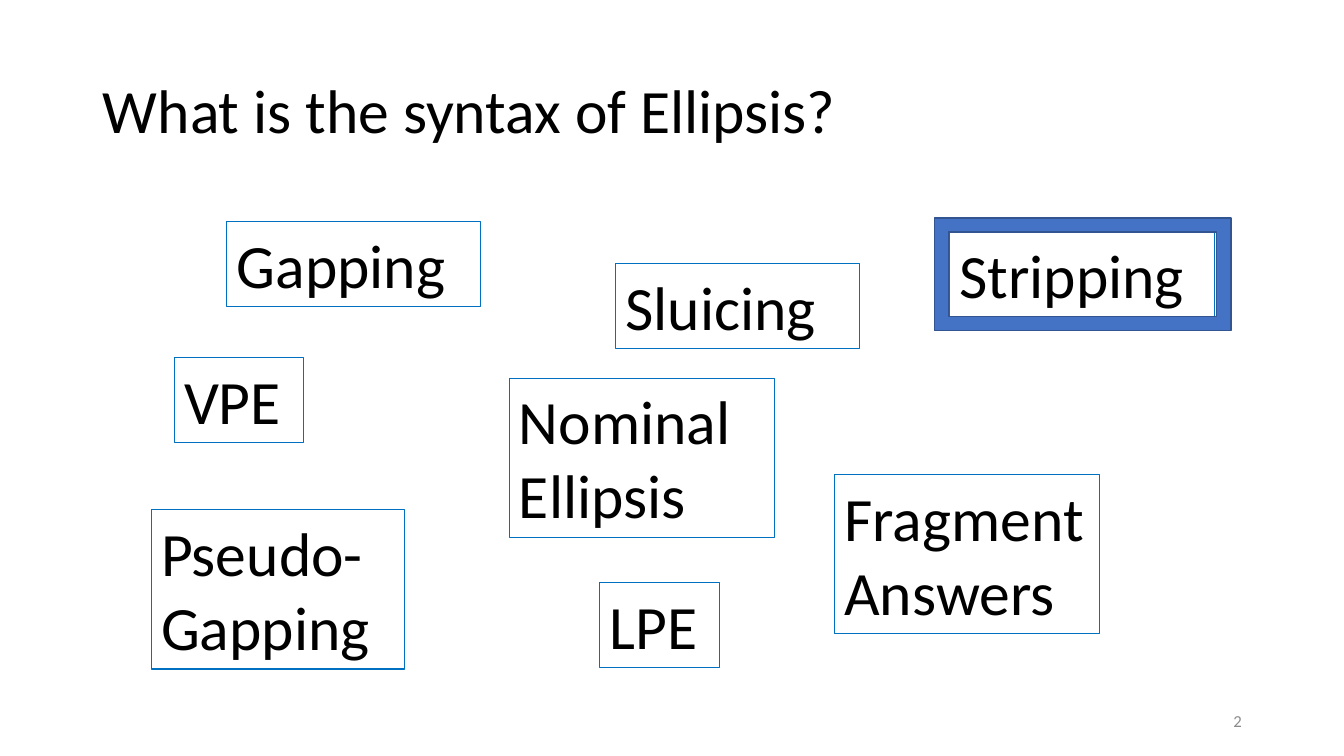
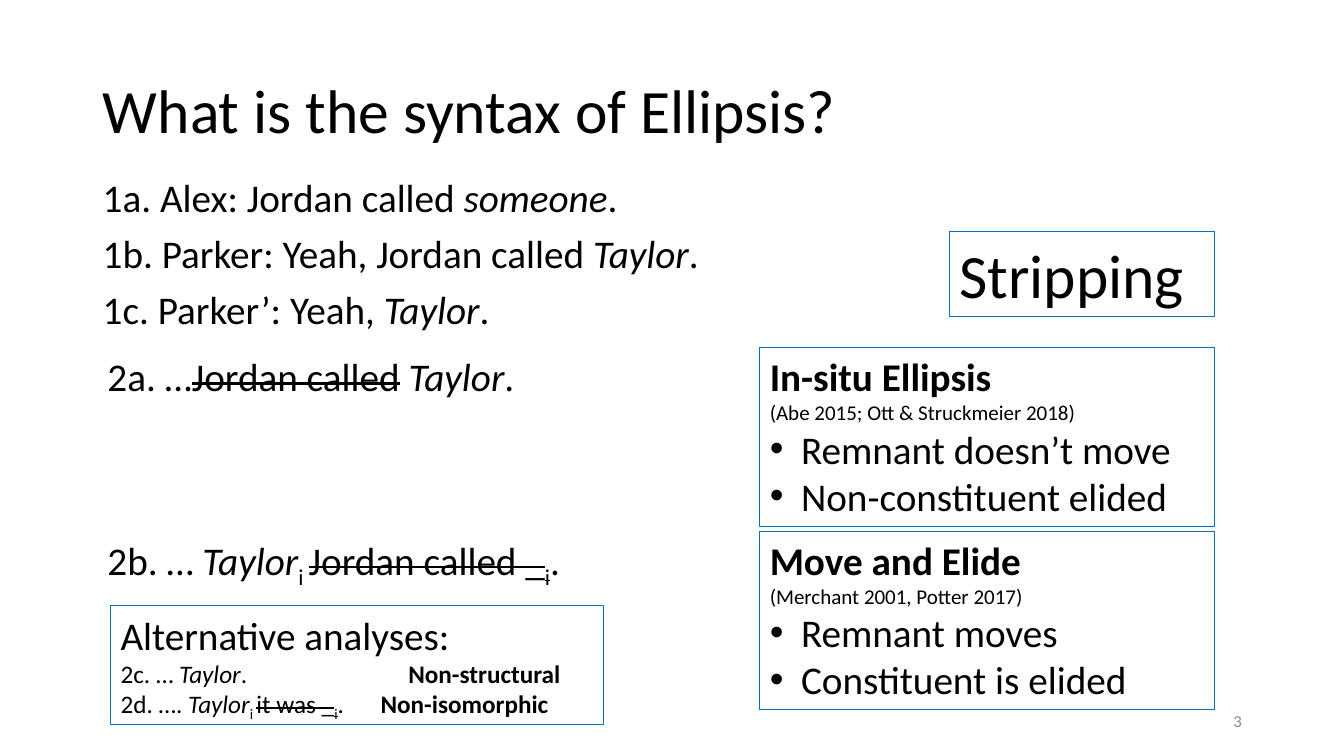
"""Build two slides on the syntax of ellipsis."""
import dataclasses
import typing

import lxml.etree
import pptx
import pptx.dml.color
import pptx.enum.shapes
import pptx.enum.text
import pptx.oxml.ns
import pptx.util

Cm = pptx.util.Cm
BLACK = pptx.dml.color.RGBColor(0x00, 0x00, 0x00)
GRAY = pptx.dml.color.RGBColor(0x8C, 0x8C, 0x8C)
OUTLINE = pptx.dml.color.RGBColor(0x00, 0x70, 0xC0)
FRAME_FILL = pptx.dml.color.RGBColor(0x44, 0x72, 0xC4)
FRAME_LINE = pptx.dml.color.RGBColor(0x32, 0x54, 0x91)
FONT = "Calibri"
TITLE = "What is the syntax of Ellipsis?"
TITLE_SIZE, TEXT_SIZE, SMALL_SIZE, SOURCE_SIZE, NUMBER_SIZE = 44, 28, 18, 15, 12
BULLET_INDENT = 0.79
ONE_LINE, TWO_LINES = 2.13, 4.01
CARD_LEFT, CARD_WIDTH = 19.15, 11.46
EXAMPLE_LEFT = 2.46
IN_SITU_TOP, MOVE_TOP = 8.76, 13.39


@dataclasses.dataclass(frozen=True)
class Span:
    """A piece of text with one format."""
    text: str
    bold: bool = False
    italic: bool = False
    strike: bool = False
    subscript: bool = False


@dataclasses.dataclass(frozen=True)
class Line:
    """A paragraph made of spans."""
    spans: tuple[Span, ...]
    size: float = TEXT_SIZE
    bullet: bool = False
    tab: float = 0
    space_before: float = 0
    line_spacing: float = 1.0


@dataclasses.dataclass(frozen=True)
class Box:
    """A text box measured in centimetres."""
    left: float
    top: float
    width: float
    height: float
    lines: tuple[Line, ...]
    outlined: bool = True


def label(left: float, top: float, width: float, height: float, text: str) -> Box:
    """Return an outlined box naming one kind of ellipsis."""
    return Box(left, top, width, height, (Line((Span(text),), TITLE_SIZE),))


def analysis(top: float, heading: str, source: str, *points: str) -> Box:
    """Return a box with a heading, its source and bullet points."""
    lines = (
        Line((Span(heading, bold=True),)),
        Line((Span(source),), SOURCE_SIZE),
        *(Line((Span(point),), bullet=True) for point in points),
    )
    return Box(CARD_LEFT, top, CARD_WIDTH, 4.5, lines)


def dialogue(start: str, remnant: str) -> Line:
    """Return one spaced example line ending in an italic word."""
    spans = (Span(start), Span(remnant, italic=True), Span("."))
    return Line(spans, space_before=10, line_spacing=0.9)


def moved(start: str, elided: str) -> tuple[Span, ...]:
    """Return a fronted remnant followed by struck-out material and a trace."""
    return (
        Span(start),
        Span("Taylor", italic=True),
        Span("i ", subscript=True),
        Span(f"{elided} _", strike=True),
        Span("i", strike=True, subscript=True),
        Span("."),
    )


STRIPPING = label(23.93, 5.84, 6.68, ONE_LINE, "Stripping")
KINDS = (
    STRIPPING,
    label(5.72, 5.59, 6.38, ONE_LINE, "Gapping"),
    label(15.11, 14.68, 3.02, ONE_LINE, "LPE"),
    label(21.03, 11.96, 6.68, TWO_LINES, "Fragment Answers"),
    label(15.51, 6.65, 6.15, ONE_LINE, "Sluicing"),
    label(4.39, 9.02, 3.25, ONE_LINE, "VPE"),
    label(3.81, 12.85, 6.38, TWO_LINES, "Pseudo-Gapping"),
    label(12.83, 9.53, 6.68, TWO_LINES, "Nominal Ellipsis"),
)
ANALYSES = (
    Box(2.34, 4.37, 29.21, 4.39, (
        dialogue("1a. Alex: Jordan called ", "someone"),
        dialogue("1b. Parker: Yeah, Jordan called ", "Taylor"),
        dialogue("1c. Parker’: Yeah, ", "Taylor"),
    ), outlined=False),
    Box(2.79, 15.27, 12.42, 3, (
        Line((Span("Alternative analyses:"),)),
        Line((Span("2c. …"), Span(" Taylor", italic=True), Span(".\t"),
              Span("Non-structural", bold=True)), SMALL_SIZE, tab=7.25),
        Line((*moved("2d. …. ", "it was"), Span("\t"),
              Span("Non-isomorphic", bold=True)), SMALL_SIZE, tab=6.55),
    )),
    analysis(MOVE_TOP, "Move and Elide", "(Merchant 2001, Potter 2017)",
             "Remnant moves", "Constituent is elided"),
    analysis(IN_SITU_TOP, "In-situ Ellipsis", "(Abe 2015; Ott & Struckmeier 2018)",
             "Remnant doesn’t move", "Non-constituent elided"),
    STRIPPING,
    Box(EXAMPLE_LEFT, IN_SITU_TOP, 12.93, 1.45, (
        Line((Span("2a. …"), Span("Jordan called", strike=True), Span(" "),
              Span("Taylor", italic=True), Span("."))),
    ), outlined=False),
    Box(EXAMPLE_LEFT, MOVE_TOP, 14.91, 1.45,
        (Line(moved("2b. … ", "Jordan called")),), outlined=False),
)


def add_text(para: typing.Any, text: str, *, size: float,
             color: pptx.dml.color.RGBColor = BLACK, bold: bool = False,
             italic: bool = False, strike: bool = False,
             subscript: bool = False) -> None:
    """Append formatted text to a paragraph."""
    span = para.add_run()
    span.text = text
    span.font.name = FONT
    span.font.size = pptx.util.Pt(size)
    span.font.color.rgb = color
    span.font.bold = bold
    span.font.italic = italic
    properties = span._r.get_or_add_rPr()
    if strike:
        properties.set("strike", "sngStrike")
    if subscript:
        properties.set("baseline", "-25000")


def add_line(para: typing.Any, line: Line) -> None:
    """Fill a paragraph with the spans of a line."""
    para.alignment = pptx.enum.text.PP_ALIGN.LEFT
    para.line_spacing = line.line_spacing
    para.space_before = pptx.util.Pt(line.space_before)
    qn = pptx.oxml.ns.qn
    properties = para._p.get_or_add_pPr()
    if line.bullet:
        indent = Cm(BULLET_INDENT)
        properties.set("marL", str(indent))
        properties.set("indent", str(-indent))
        lxml.etree.SubElement(properties, qn("a:buFont"), typeface="Arial")
        lxml.etree.SubElement(properties, qn("a:buChar"), char="•")
    if line.tab:
        tabs = lxml.etree.SubElement(properties, qn("a:tabLst"))
        lxml.etree.SubElement(tabs, qn("a:tab"), pos=str(Cm(line.tab)), algn="l")
    for span in line.spans:
        add_text(para, span.text, size=line.size, bold=span.bold, italic=span.italic,
                 strike=span.strike, subscript=span.subscript)


def add_box(page: typing.Any, box: Box) -> None:
    """Draw a text box on a page."""
    shape = page.shapes.add_textbox(
        Cm(box.left), Cm(box.top), Cm(box.width), Cm(box.height))
    frame = shape.text_frame
    frame.word_wrap = True
    if box.outlined:
        shape.line.color.rgb = OUTLINE
        shape.line.width = pptx.util.Pt(0.75)
    for index, line in enumerate(box.lines):
        add_line(frame.add_paragraph() if index else frame.paragraphs[0], line)


def add_highlight(page: typing.Any) -> None:
    """Draw the blue frame around the stripping box."""
    shape = page.shapes.add_shape(
        pptx.enum.shapes.MSO_SHAPE.FRAME, Cm(23.55), Cm(5.49), Cm(7.47), Cm(2.84))
    shape.shadow.inherit = False
    shape.fill.solid()
    shape.fill.fore_color.rgb = FRAME_FILL
    shape.line.color.rgb = FRAME_LINE
    shape.line.width = pptx.util.Pt(1)


def add_page(deck: typing.Any, number: int, boxes: tuple[Box, ...]) -> typing.Any:
    """Add a page with the shared title, its number and its boxes."""
    page = deck.slides.add_slide(deck.slide_layouts[5])
    title = page.shapes.title
    title.left, title.top, title.width, title.height = (
        Cm(2.34), Cm(1.02), Cm(29.21), Cm(3.68))
    title.text_frame.vertical_anchor = pptx.enum.text.MSO_ANCHOR.MIDDLE
    add_line(title.text_frame.paragraphs[0],
             Line((Span(TITLE),), TITLE_SIZE, line_spacing=0.9))
    footer = page.shapes.add_textbox(Cm(23.93), Cm(17.65), Cm(7.62), Cm(1.02))
    footer.text_frame.word_wrap = True
    footer.text_frame.vertical_anchor = pptx.enum.text.MSO_ANCHOR.MIDDLE
    para = footer.text_frame.paragraphs[0]
    para.alignment = pptx.enum.text.PP_ALIGN.RIGHT
    add_text(para, str(number), size=NUMBER_SIZE, color=GRAY)
    for box in boxes:
        add_box(page, box)
    return page


def main() -> None:
    """Build and save the deck."""
    deck = pptx.Presentation()
    deck.slide_width, deck.slide_height = Cm(33.87), Cm(19.05)
    add_highlight(add_page(deck, 2, KINDS))
    add_page(deck, 3, ANALYSES)
    deck.save("out.pptx")


if __name__ == "__main__":
    main()
